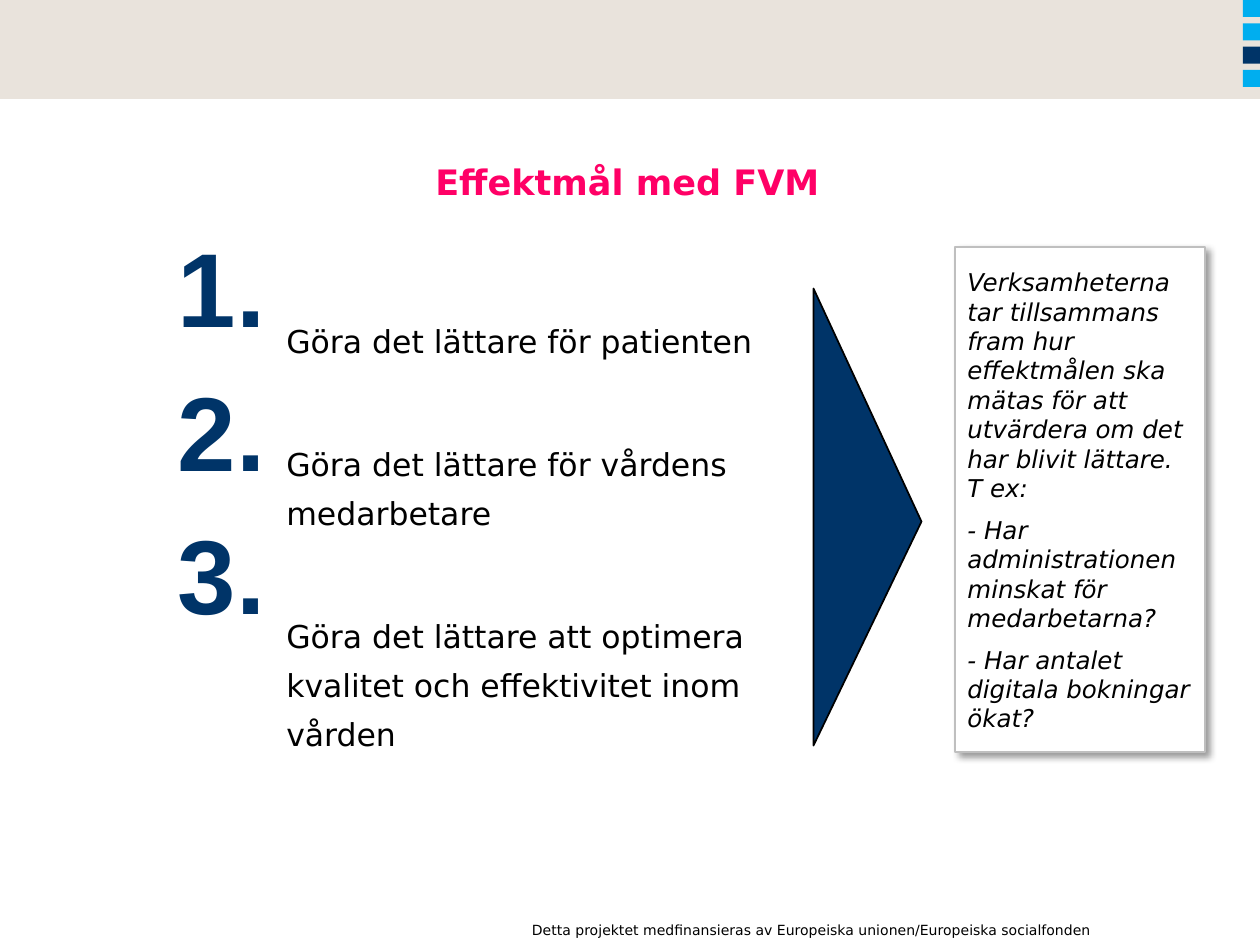
import dataclasses

import lxml.etree
import pptx
import pptx.dml.color
import pptx.enum.shapes
import pptx.enum.text
import pptx.oxml.ns
import pptx.util

SHAPE = pptx.enum.shapes.MSO_SHAPE
ALIGN = pptx.enum.text.PP_ALIGN
ANCHOR = pptx.enum.text.MSO_ANCHOR


@dataclasses.dataclass(frozen=True)
class Theme:
    sand: str = "E9E3DC"
    sky: str = "00AEEF"
    navy: str = "003468"
    pink: str = "FF0066"
    black: str = "000000"
    white: str = "FFFFFF"
    gray: str = "BFBFBF"
    body_font: str = "DejaVu Sans"
    number_font: str = "Arial"
    number_size: int = 60
    title_size: int = 20
    goal_size: int = 18
    note_size: int = 14
    footer_size: int = 8


def px(length):
    return pptx.util.Emu(round(length * 914400 / 126))


def color(value):
    return pptx.dml.color.RGBColor.from_string(value)


class SlideBuilder:
    def __init__(self, slide, theme):
        self.slide = slide
        self.theme = theme

    def shape(self, kind, box, fill, line=None, line_width=1):
        shape = self.slide.shapes.add_shape(kind, *map(px, box))
        shape.shadow.inherit = False
        shape.fill.solid()
        shape.fill.fore_color.rgb = color(fill)
        if line:
            shape.line.color.rgb = color(line)
            shape.line.width = pptx.util.Pt(line_width)
        else:
            shape.line.fill.background()
        return shape

    def card(self, box):
        card = self.shape(SHAPE.RECTANGLE, box, self.theme.white, self.theme.gray, 0.75)
        effects = card._element.spPr.find(pptx.oxml.ns.qn("a:effectLst"))
        shadow = lxml.etree.SubElement(
            effects, pptx.oxml.ns.qn("a:outerShdw"), blurRad=str(pptx.util.Pt(4)),
            dist=str(pptx.util.Pt(3)), dir=str(45 * 60000), algn="tl", rotWithShape="0")
        tint = lxml.etree.SubElement(
            shadow, pptx.oxml.ns.qn("a:srgbClr"), val=self.theme.black)
        lxml.etree.SubElement(tint, pptx.oxml.ns.qn("a:alpha"), val="40000")

    def arrowhead(self, box, apex):
        triangle = self.shape(
            SHAPE.ISOSCELES_TRIANGLE, box, self.theme.navy, self.theme.black)
        triangle.rotation = 90
        triangle.adjustments[0] = apex

    def text(self, box, paragraphs, size, font=None, ink=None, bold=False, italic=False,
             align=ALIGN.LEFT, anchor=ANCHOR.TOP, insets=None, gap=0, line_spacing=1.0):
        frame = self.slide.shapes.add_textbox(*map(px, box)).text_frame
        frame.word_wrap = True
        frame.vertical_anchor = anchor
        if insets:
            (frame.margin_left, frame.margin_top,
             frame.margin_right, frame.margin_bottom) = map(px, insets)
        frame.text = "\n".join(paragraphs)
        for index, paragraph in enumerate(frame.paragraphs):
            paragraph.alignment = align
            paragraph.line_spacing = line_spacing
            if index:
                paragraph.space_before = pptx.util.Pt(gap)
            for run in paragraph.runs:
                run.font.name = font or self.theme.body_font
                run.font.size = pptx.util.Pt(size)
                run.font.bold = bold
                run.font.italic = italic
                run.font.color.rgb = color(ink or self.theme.black)


def main():
    presentation = pptx.Presentation()
    presentation.slide_width = px(1260)
    presentation.slide_height = px(945)
    theme = Theme()
    builder = SlideBuilder(
        presentation.slides.add_slide(presentation.slide_layouts[6]), theme)

    builder.shape(SHAPE.RECTANGLE, (0, 0, 1260, 99), theme.sand)
    for index, fill in enumerate((theme.sky, theme.sky, theme.navy, theme.sky)):
        builder.shape(SHAPE.RECTANGLE, (1243, index * 70 / 3, 17, 17), fill)
    builder.text(
        (505, 915, 599, 30),
        ["Detta projektet medfinansieras av Europeiska unionen/Europeiska socialfonden"],
        theme.footer_size, align=ALIGN.RIGHT)

    builder.text((63, 118, 1134, 90), ["Effektmål med FVM"], theme.title_size,
                 ink=theme.pink, bold=True, align=ALIGN.CENTER,
                 anchor=ANCHOR.BOTTOM, insets=(0, 5, 5, 5))

    goals = [
        "Göra det lättare för patienten",
        "Göra det lättare för vårdens medarbetare",
        "Göra det lättare att optimera kvalitet och effektivitet inom vården",
    ]
    builder.text((274, 305, 554, 407), goals, theme.goal_size, gap=42, line_spacing=1.3)
    for index in range(len(goals)):
        builder.text((168, 218 + 143.5 * index, 107, 86), [f"{index + 1}."],
                     theme.number_size, font=theme.number_font, ink=theme.navy,
                     bold=True, align=ALIGN.CENTER, insets=(5, 5, 5, 5))

    builder.card((955, 247, 250, 505))
    builder.text((955, 261, 250, 518), [
        "Verksamheterna tar tillsammans fram hur effektmålen ska mätas "
        "för att utvärdera om det har blivit lättare. T ex:",
        "- Har administrationen minskat för medarbetarna?",
        "- Har antalet digitala bokningar ökat?",
    ], theme.note_size, italic=True, gap=7)
    builder.arrowhead((639, 463, 457, 108), 0.51)

    presentation.save("out.pptx")


if __name__ == "__main__":
    main()
